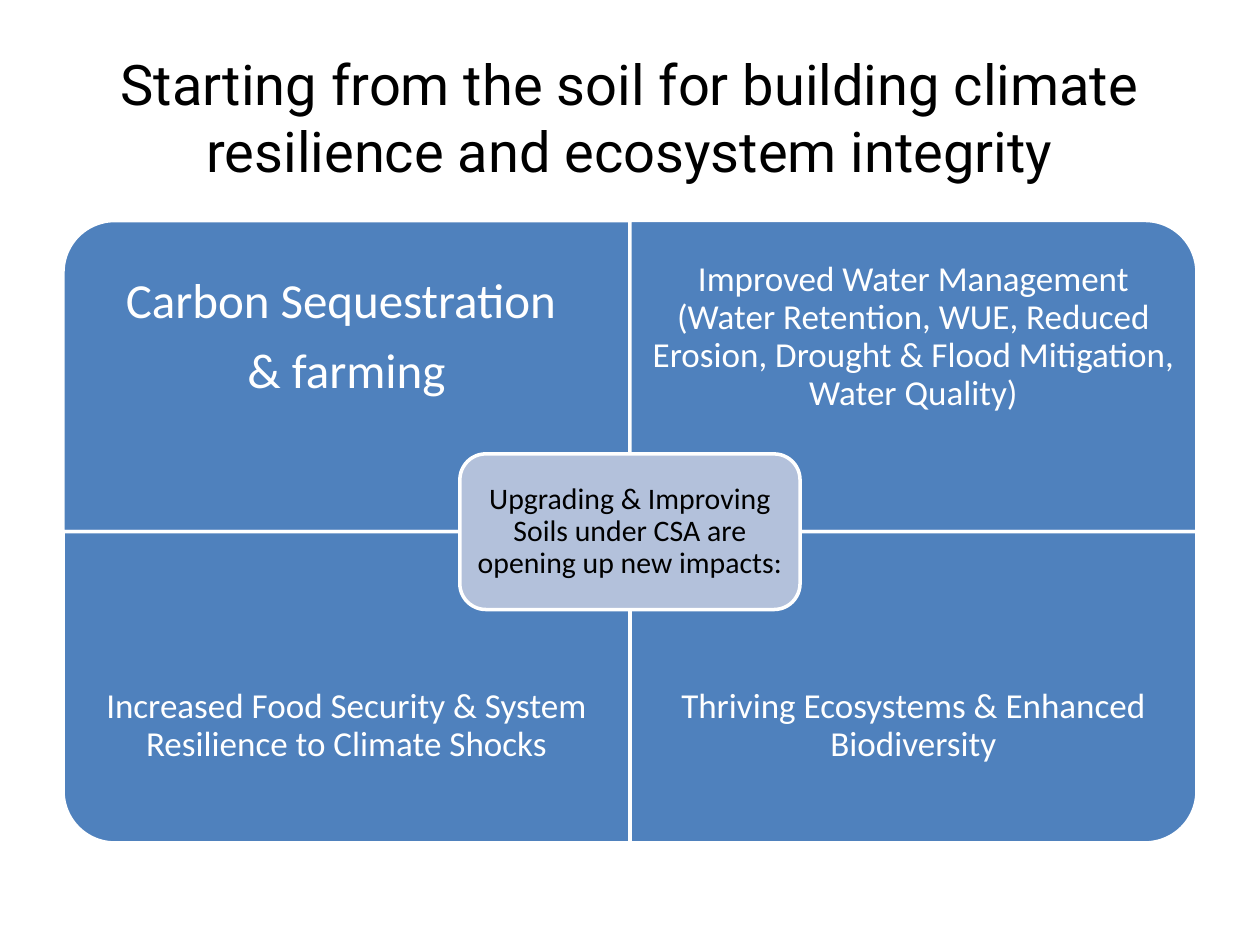
from pptx import Presentation
from pptx.dml.color import RGBColor
from pptx.enum.shapes import MSO_SHAPE
from pptx.enum.text import MSO_ANCHOR, PP_ALIGN
from pptx.util import Inches, Pt

ROUND_ONE = MSO_SHAPE.ROUND_1_RECTANGLE
ROUNDED = MSO_SHAPE.ROUNDED_RECTANGLE
MIDDLE = MSO_ANCHOR.MIDDLE
CENTER = PP_ALIGN.CENTER

BLUE, PALE, WHITE, BLACK = "4F81BD", "B3C1DB", "FFFFFF", "000000"

TITLE = "Starting from the soil for building climate resilience and ecosystem integrity"
CENTRE_TEXT = "Upgrading & Improving Soils under CSA are opening up new impacts:"
# column, row, rotation that turns the round corner outwards, size, inset, paragraphs
QUADRANTS = [
    (0, 0, 270, 28, 0.22, ["Carbon Sequestration ", "& farming"]),
    (1, 0, 0, 20, 0.16, ["Improved Water Management (Water Retention, WUE, Reduced "
                         "Erosion, Drought & Flood Mitigation, Water Quality)"]),
    (0, 1, 180, 20, 0.16, ["Increased Food Security & System Resilience to Climate Shocks"]),
    (1, 1, 90, 20, 0.16, ["Thriving Ecosystems & Enhanced Biodiversity"]),
]


def rgb(value):
    return RGBColor.from_string(value)


def write(tf, paragraphs, size, color, inset):
    frame_format = {"word_wrap": True, "vertical_anchor": MIDDLE}
    for side in ("left", "top", "right", "bottom"):
        frame_format[f"margin_{side}"] = Inches(inset)
    for name, value in frame_format.items():
        setattr(tf, name, value)
    for i, text in enumerate(paragraphs):
        p = tf.paragraphs[0] if i == 0 else tf.add_paragraph()
        p.alignment = CENTER
        p.line_spacing = 0.9
        p.space_after = Pt(0.35 * size)
        r = p.add_run()
        r.text = text
        r.font.name = "Calibri"
        r.font.size = Pt(size)
        r.font.color.rgb = rgb(color)


def add_panel(slide, kind, left, top, width, height, fill):
    sp = slide.shapes.add_shape(kind, *map(Inches, (left, top, width, height)))
    sp.shadow.inherit = False
    sp.fill.solid()
    sp.fill.fore_color.rgb = rgb(fill)
    sp.line.color.rgb = rgb(WHITE)
    sp.line.width = Pt(2)
    return sp


def add_quadrant(slide, left, top, width, height, row, rotation, size, inset, paragraphs):
    """Panel with one round corner; its text keeps to the outer three quarters."""
    w, h = (height, width) if rotation % 180 else (width, height)
    sp = add_panel(slide, ROUND_ONE, left + (width - w) / 2, top + (height - h) / 2, w, h, BLUE)
    sp.rotation = rotation
    text_height = 0.75 * height
    text_top = top + row * (height - text_height)
    box = slide.shapes.add_textbox(*map(Inches, (left, text_top, width, text_height)))
    write(box.text_frame, paragraphs, size, WHITE, inset)


def add_matrix(slide, left, top, width, height):
    w, h = width / 2, height / 2
    for col, row, rotation, size, inset, paragraphs in QUADRANTS:
        add_quadrant(slide, left + col * w, top + row * h, w, h,
                     row, rotation, size, inset, paragraphs)
    centre_w, centre_h = 0.6 * w, 0.5 * h
    sp = add_panel(slide, ROUNDED, left + w - centre_w / 2, top + h - centre_h / 2,
                   centre_w, centre_h, PALE)
    write(sp.text_frame, [CENTRE_TEXT], 17, BLACK, 0.07)


def add_title(slide, left, top, width, height):
    title = slide.shapes.title
    title.left, title.top, title.width, title.height = map(Inches, (left, top, width, height))
    tf = title.text_frame
    tf.text = TITLE
    tf.vertical_anchor = MIDDLE
    p = tf.paragraphs[0]
    p.alignment = CENTER
    font = p.runs[0].font
    font.name = "Roboto"
    font.size = Pt(32)
    font.color.rgb = rgb(BLACK)


def main():
    prs = Presentation()
    prs.slide_width, prs.slide_height = Inches(10), Inches(7.5)
    slide = prs.slides.add_slide(prs.slide_layouts[5])
    add_title(slide, 0.5, 0.3, 9, 1.25)
    add_matrix(slide, 0.5, 1.75, 9, 4.94)
    prs.save("out.pptx")


if __name__ == "__main__":
    main()
